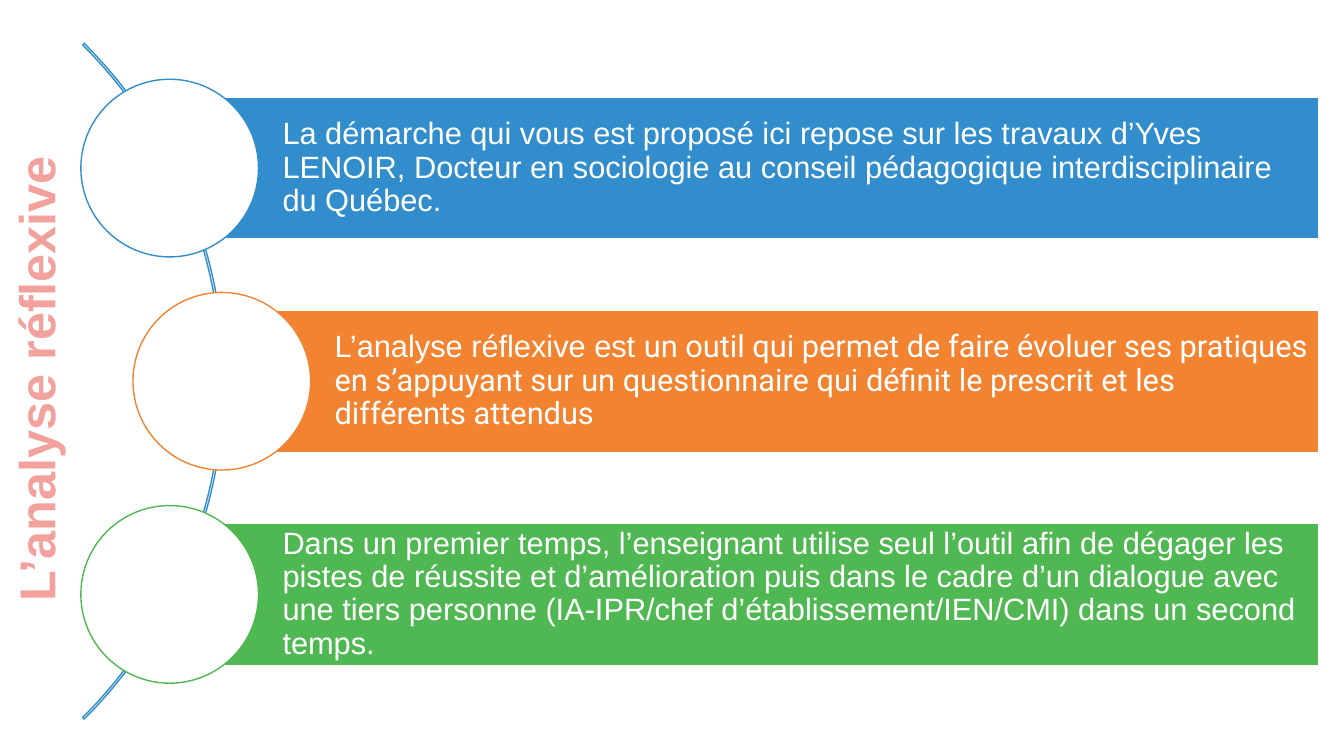
from pptx import Presentation
from pptx.dml.color import RGBColor
from pptx.enum.shapes import MSO_SHAPE as SHAPE
from pptx.enum.text import MSO_ANCHOR as ANCHOR, PP_ALIGN as ALIGN
from pptx.util import Pt

WHITE = RGBColor(0xFF, 0xFF, 0xFF)
BLUE = RGBColor(0x31, 0x8D, 0xCB)
ORANGE = RGBColor(0xF2, 0x83, 0x30)
GREEN = RGBColor(0x50, 0xB8, 0x52)
PINK = RGBColor(0xF3, 0xA1, 0x9D)

BAR_H = 101.5
CIRCLE_D = 126.9
PITCH = 152.25
INDENT = 37.2

STEPS = [
    (BLUE, 0, [("La démarche qui vous est proposé ici repose sur les travaux d’Yves LENOIR, "
                "Docteur en sociologie au conseil pédagogique interdisciplinaire du Québec.", "Arial")]),
    (ORANGE, INDENT, [("L’analyse réflexive est ", "Arial"),
                      ("un outil qui permet de faire évoluer ses pratiques en s’appuyant sur un "
                       "questionnaire qui définit le prescrit et les différents attendus", "Roboto")]),
    (GREEN, 0, [("Dans un premier temps, l’enseignant utilise seul l’outil afin de dégager les "
                 "pistes de réussite et d’amélioration puis dans le cadre d’un dialogue avec une "
                 "tiers personne (IA-IPR/chef d’établissement/IEN/CMI) dans un second temps.", "Arial")]),
]


def add_shape(s, kind, x, y, w, h, line, fill=None):
    """Add a flat preset shape with a thin outline."""
    sp = s.shapes.add_shape(kind, Pt(x), Pt(y), Pt(w), Pt(h))
    sp.shadow.inherit = False
    if fill is None:
        sp.fill.background()
    else:
        sp.fill.solid()
        sp.fill.fore_color.rgb = fill
    sp.line.color.rgb = line
    sp.line.width = Pt(1)
    return sp


def add_title(s, x, y, w, h):
    """Add the title reading upwards, filling the given vertical strip."""
    sp = s.shapes.add_textbox(Pt(x + (w - h) / 2), Pt(y + (h - w) / 2), Pt(h), Pt(w))
    sp.rotation = 270
    tf = sp.text_frame
    tf.word_wrap = True
    p = tf.paragraphs[0]
    p.text = "L’analyse réflexive"
    p.alignment = ALIGN.CENTER
    p.font.name = "Arial"
    p.font.size = Pt(36)
    p.font.bold = True
    p.font.color.rgb = PINK


def add_step(s, x, cy, right, color, runs):
    """Add a text bar with a circle centred on its left end."""
    sp = add_shape(s, SHAPE.RECTANGLE, x, cy - BAR_H / 2, right - x, BAR_H, WHITE, color)
    tf = sp.text_frame
    tf.word_wrap = True
    tf.vertical_anchor = ANCHOR.MIDDLE
    tf.margin_left = Pt(80.6)
    tf.margin_right = tf.margin_top = tf.margin_bottom = Pt(4.4)
    p = tf.paragraphs[0]
    p.alignment = ALIGN.LEFT
    p.line_spacing = 0.9
    for text, font in runs:
        r = p.add_run()
        r.text = text
        r.font.name = font
        r.font.size = Pt(22)
        r.font.color.rgb = WHITE
    add_shape(s, SHAPE.OVAL, x - CIRCLE_D / 2, cy - CIRCLE_D / 2, CIRCLE_D, CIRCLE_D, color, WHITE)


def add_steps(s, x, cy, right):
    """Add the arc and the steps strung along it, centred on cy."""
    d = 682.6
    arc = add_shape(s, SHAPE.BLOCK_ARC, x - 643.7, cy - d / 2, d, d, BLUE)
    for i, value in enumerate((189, 27, 0.0023)):
        arc.adjustments[i] = value
    for i, (color, indent, runs) in enumerate(STEPS):
        add_step(s, x + indent, cy + (i - 1) * PITCH, right, color, runs)


def main():
    """Build the slide and save it."""
    prs = Presentation()
    prs.slide_width, prs.slide_height = Pt(960), Pt(540)
    s = prs.slides.add_slide(prs.slide_layouts[6])
    add_title(s, 0, 0.5, 51, 540)
    add_steps(s, 121.2, 272.3, 942.2)
    prs.save("out.pptx")


if __name__ == "__main__":
    main()
